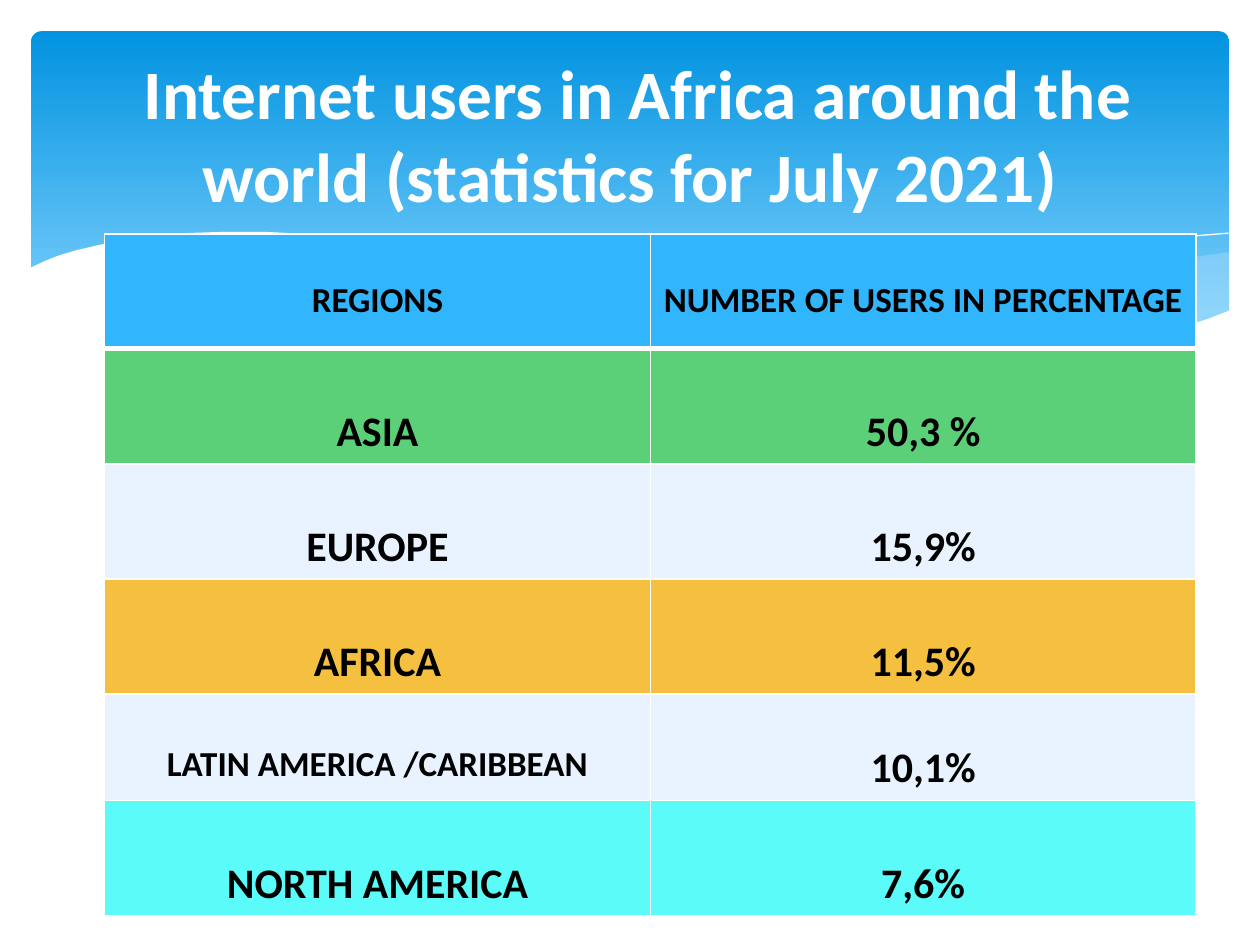
"""Build a slide with a table of internet users by region."""
from lxml import etree
from pptx import Presentation
from pptx import util as u
from pptx.dml.color import RGBColor
from pptx.enum import shapes, text
from pptx.oxml.ns import qn

Cm, Pt = u.Cm, u.Pt
COLORS = {
    "white": "FFFFFF", "black": "000000", "banner_top": "0293E0",
    "banner_bottom": "83D3FE", "wave": "C6E7FC", "header": "31B6FD",
    "green": "5BD078", "pale": "E8F3FF", "amber": "F5C040", "cyan": "5AFBF8",
}
RGB = {name: RGBColor.from_string(value) for name, value in COLORS.items()}


def style(para, size, color):
    para.alignment = text.PP_ALIGN.CENTER
    for span in para.runs:
        span.font.name = "Calibri"
        span.font.size = Pt(size)
        span.font.bold = True
        span.font.color.rgb = RGB[color]


def set_border(cell, side, width):
    line = etree.SubElement(cell._tc.get_or_add_tcPr(), qn(f"a:ln{side}"), w=str(Pt(width)))
    fill = etree.SubElement(line, qn("a:solidFill"))
    etree.SubElement(fill, qn("a:srgbClr"), val=COLORS["white"])


deck = Presentation()
deck.slide_width, deck.slide_height = Cm(25.4), Cm(19.05)
page = deck.slides.add_slide(deck.slide_layouts[6])

banner = page.shapes.add_shape(
    shapes.MSO_SHAPE.ROUNDED_RECTANGLE, Cm(0.63), Cm(0.63), Cm(24.15), Cm(6.86))
banner.adjustments[0] = 0.03
banner.shadow.inherit = False
banner.line.fill.background()
banner.fill.gradient()
banner.fill.gradient_angle = 270
for stop, name, position in zip(
        banner.fill.gradient_stops, ("banner_top", "banner_bottom"), (0, 0.9)):
    stop.color.rgb = RGB[name]
    stop.position = position

right_wave = [
    (975, 200), (948, 204), (921, 210), (891, 216), (861, 223), (805, 237),
    (753, 248), (706, 257), (661, 265), (691, 269), (719, 272), (745, 275),
    (781, 277), (814, 278), (844, 277), (872, 274), (897, 270), (921, 265),
    (942, 259), (963, 252), (976, 247), (976, 200)]
long_wave = [
    (893, 273), (866, 269), (807, 260), (741, 247), (668, 231), (598, 214),
    (555, 205), (514, 198), (465, 191), (420, 187), (380, 185), (344, 186),
    (313, 188), (286, 191), (323, 196), (362, 203), (404, 211), (449, 222),
    (530, 240), (601, 255), (650, 264), (695, 270), (748, 276), (796, 278),
    (838, 278), (867, 276)]
long_line = [
    (309, 195), (328, 192), (353, 189), (387, 187), (433, 187), (469, 189),
    (510, 192), (556, 197), (608, 204), (665, 213), (727, 226), (795, 241),
    (869, 261), (907, 272)]
right_line = [
    (613, 257), (653, 246), (695, 235), (748, 223), (806, 210), (866, 199),
    (895, 194), (924, 190), (951, 187), (975, 185)]
white_base = [
    (977, 246), (959, 253), (940, 259), (920, 265), (899, 269), (875, 273),
    (850, 275), (809, 277), (761, 275), (708, 270), (648, 262), (579, 250),
    (503, 233), (447, 220), (391, 207), (340, 197), (292, 190), (250, 186),
    (211, 184), (177, 184), (146, 185), (119, 187), (95, 191), (76, 195),
    (59, 199), (46, 203), (36, 207), (23, 213), (23, 329), (977, 329)]
waves = [
    (right_wave, "wave", 29), (long_wave, "wave", 40),
    (long_line, None, None), (right_line, None, None), (white_base, "white", 100)]

for points, color, opacity in waves:
    builder = page.shapes.build_freeform(*points[0], scale=Cm(0.0254))
    builder.add_line_segments(points[1:], close=color is not None)
    wave = builder.convert_to_shape()
    wave.shadow.inherit = False
    if color is None:
        wave.fill.background()
        wave.line.color.rgb = RGB["white"]
        wave.line.width = 0
        continue
    wave.line.fill.background()
    wave.fill.solid()
    wave.fill.fore_color.rgb = RGB[color]
    if opacity < 100:
        tint = wave._element.spPr.find(qn("a:solidFill"))[0]
        etree.SubElement(tint, qn("a:alpha"), val=str(opacity * 1000))

title = page.shapes.add_textbox(Cm(1.27), Cm(0.94), Cm(22.86), Cm(3.48))
frame = title.text_frame
frame.word_wrap = True
frame.vertical_anchor = text.MSO_ANCHOR.MIDDLE
frame.text = " Internet users in Africa around the world (statistics for July 2021)"
style(frame.paragraphs[0], 39.6, "white")

records = [
    ("REGIONS", "NUMBER OF USERS IN PERCENTAGE", "header", 2.31, 18, (20, 20)),
    ("ASIA", "50,3 %", "green", 2.32, 24, (24, 24)),
    ("EUROPE", "15,9%", "pale", 2.32, 24, (24, 24)),
    ("AFRICA", "11,5%", "amber", 2.32, 24, (24, 24)),
    ("LATIN AMERICA /CARIBBEAN", "10,1%", "pale", 2.15, 20, (20, 24)),
    ("NORTH AMERICA", "7,6%", "cyan", 2.32, 24, (24, 24)),
]
table = page.shapes.add_table(
    len(records), 2, Cm(2.11), Cm(4.72), Cm(22), Cm(13.74)).table
for column in table.columns:
    column.width = Cm(11)

for row, (region, share, color, height, gap, sizes) in enumerate(records):
    table.rows[row].height = Cm(height)
    for col, (label, size) in enumerate(zip((region, share), sizes)):
        cell = table.cell(row, col)
        cell.text_frame.text = label
        cell.margin_top = Cm(0.13 + gap * 0.043)
        style(cell.text_frame.paragraphs[0], size, "black")
        for side in "LRTB":
            heavy = (row, side) in ((0, "B"), (1, "T"))
            set_border(cell, side, 3 if heavy else 1)
        cell.fill.solid()
        cell.fill.fore_color.rgb = RGB[color]

deck.save("out.pptx")
